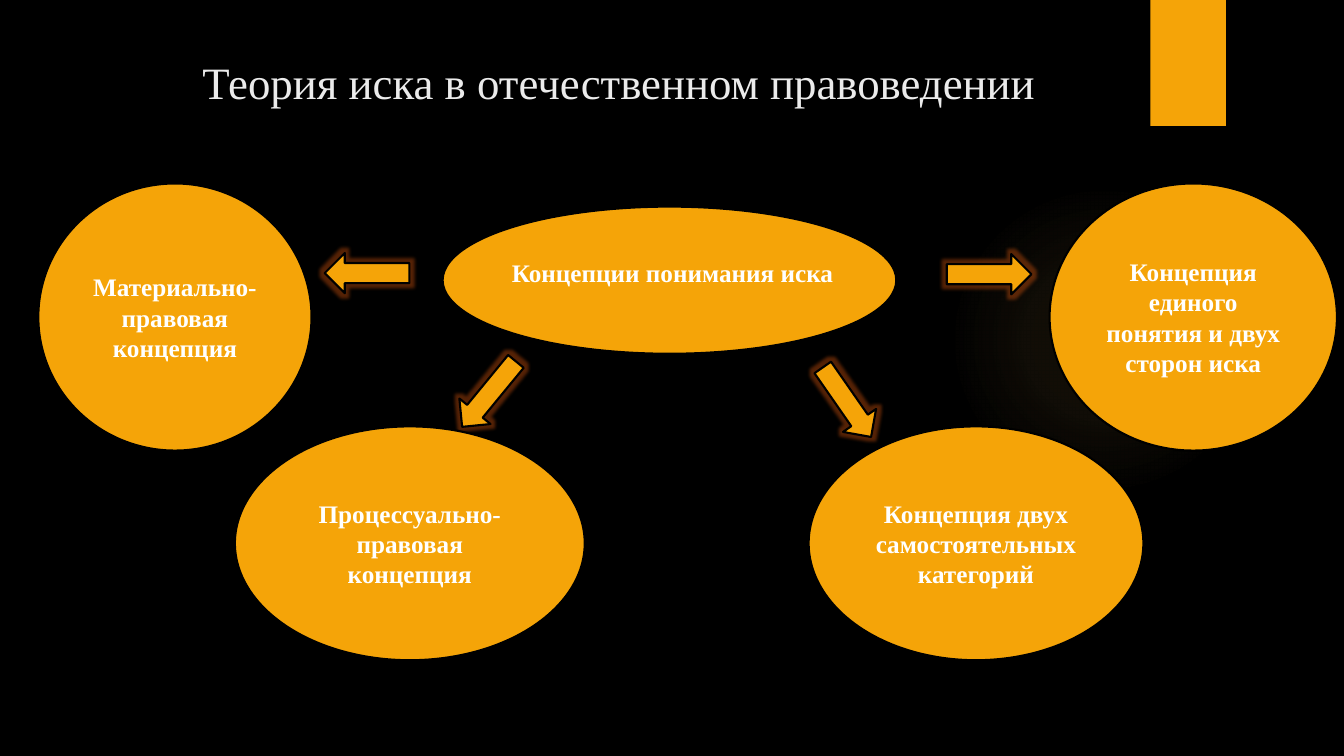
from pptx import Presentation
from pptx.dml.color import RGBColor
from pptx.enum.shapes import MSO_SHAPE as SHAPE
from pptx.enum.text import MSO_ANCHOR as ANCHOR, PP_ALIGN as ALIGN
from pptx.oxml import parse_xml
from pptx.oxml.ns import nsdecls, qn
from pptx.util import Inches, Pt

BLACK = RGBColor(0x00, 0x00, 0x00)
WHITE = RGBColor(0xFF, 0xFF, 0xFF)
PALE = RGBColor(0xEB, 0xEB, 0xEB)
ORANGE = RGBColor(0xF5, 0xA4, 0x08)
HALO = RGBColor(0xFA, 0xC9, 0x6A)
GLOW = RGBColor(0xD8, 0x57, 0x0F)
FONT = "Times New Roman"

CONCEPTS = [
    ("Материально-правовая концепция", (0, 0, 2.71, 2.65)),
    ("Процессуально-правовая концепция", (1.95, 2.41, 3.47, 2.32)),
    ("Концепция двух самостоятельных категорий", (7.64, 2.41, 3.32, 2.32)),
    ("Концепция единого понятия и двух сторон иска", (10.03, 0, 2.85, 2.65)),
]
ARROWS = [(3.06, 0.47, 90), (9.23, 0.48, 270), (4.27, 1.67, 39.4), (7.82, 1.75, 325.2)]


def write(tf, text, size=18, color=WHITE, bold=True, align=ALIGN.CENTER,
          anchor=ANCHOR.MIDDLE, wrap=True):
    """Put one formatted paragraph into a text frame."""
    tf.word_wrap = wrap
    tf.vertical_anchor = anchor
    p = tf.paragraphs[0]
    p.alignment = align
    r = p.add_run()
    r.text = text
    r.font.name, r.font.size, r.font.bold = FONT, Pt(size), bold
    r.font.color.rgb = color


def add_text(slide, box, text, **fmt):
    """Add a text box holding one paragraph."""
    write(slide.shapes.add_textbox(*map(Inches, box)).text_frame, text, **fmt)


def add_solid(slide, kind, box, line=True):
    """Add an orange shape, outlined in black on request."""
    sp = slide.shapes.add_shape(kind, *map(Inches, box))
    sp.shadow.inherit = False
    sp.fill.solid()
    sp.fill.fore_color.rgb = ORANGE
    if line:
        sp.line.color.rgb = BLACK
        sp.line.width = Pt(1.5)
    else:
        sp.line.fill.background()
    return sp


def add_arrow(slide, box, angle):
    """Add a rotated block arrow with a soft glow."""
    sp = add_solid(slide, SHAPE.DOWN_ARROW, box)
    sp.rotation = angle
    sp._element.spPr.find(qn("a:effectLst")).append(parse_xml(
        f'<a:glow {nsdecls("a")} rad="{Pt(5)}"><a:srgbClr val="{GLOW}">'
        '<a:alpha val="40000"/></a:srgbClr></a:glow>'))


def add_backdrop(slide, box):
    """Draw the faint radial halo and the corner tab on the page box."""
    x, y, w, h = box
    halo = add_solid(slide, SHAPE.OVAL, (x + 9.41, y + 1.83, 3.08, 3.08), line=False)
    stops = "".join(
        f'<a:gs pos="{pos * 1000}"><a:srgbClr val="{HALO}">'
        f'<a:alpha val="{alpha * 1000}"/></a:srgbClr></a:gs>'
        for pos, alpha in ((0, 7), (36, 6), (69, 0)))
    spPr = halo._element.spPr
    spPr.replace(spPr.find(qn("a:solidFill")), parse_xml(
        f'<a:gradFill {nsdecls("a")}><a:gsLst>{stops}</a:gsLst><a:path path="circle">'
        '<a:fillToRect l="50000" t="50000" r="50000" b="50000"/></a:path></a:gradFill>'))
    add_solid(slide, SHAPE.RECTANGLE, (x + w - 1.92, y, 0.75, 1.25), line=False)


def add_concept_map(slide, box):
    """Draw the central oval, its arrows and the four concepts."""
    x, y = box
    add_solid(slide, SHAPE.OVAL, (x + 4.01, y + 0.23, 4.5, 1.46))
    add_text(slide, (x + 4.58, y + 0.68, 3.42, 0.4), "Концепции понимания иска",
             anchor=ANCHOR.TOP, wrap=False)
    for dx, dy, angle in ARROWS:
        add_arrow(slide, (x + dx, y + dy, 0.4, 0.84), angle)
    for text, (dx, dy, w, h) in CONCEPTS:
        sp = add_solid(slide, SHAPE.OVAL, (x + dx, y + dy, w, h))
        write(sp.text_frame, text)


def main():
    """Build and save the slide."""
    prs = Presentation()
    prs.slide_width, prs.slide_height = Inches(13.33), Inches(7.5)
    slide = prs.slides.add_slide(prs.slide_layouts[6])
    slide.background.fill.solid()
    slide.background.fill.fore_color.rgb = BLACK
    add_backdrop(slide, (0, 0, 13.33, 7.5))
    add_concept_map(slide, (0.38, 1.82))
    add_text(slide, (1.91, 0.49, 9.1, 0.64), "Теория иска в отечественном правоведении",
             size=32, color=PALE, bold=False, align=ALIGN.LEFT, anchor=ANCHOR.TOP)
    prs.save("out.pptx")


if __name__ == "__main__":
    main()
